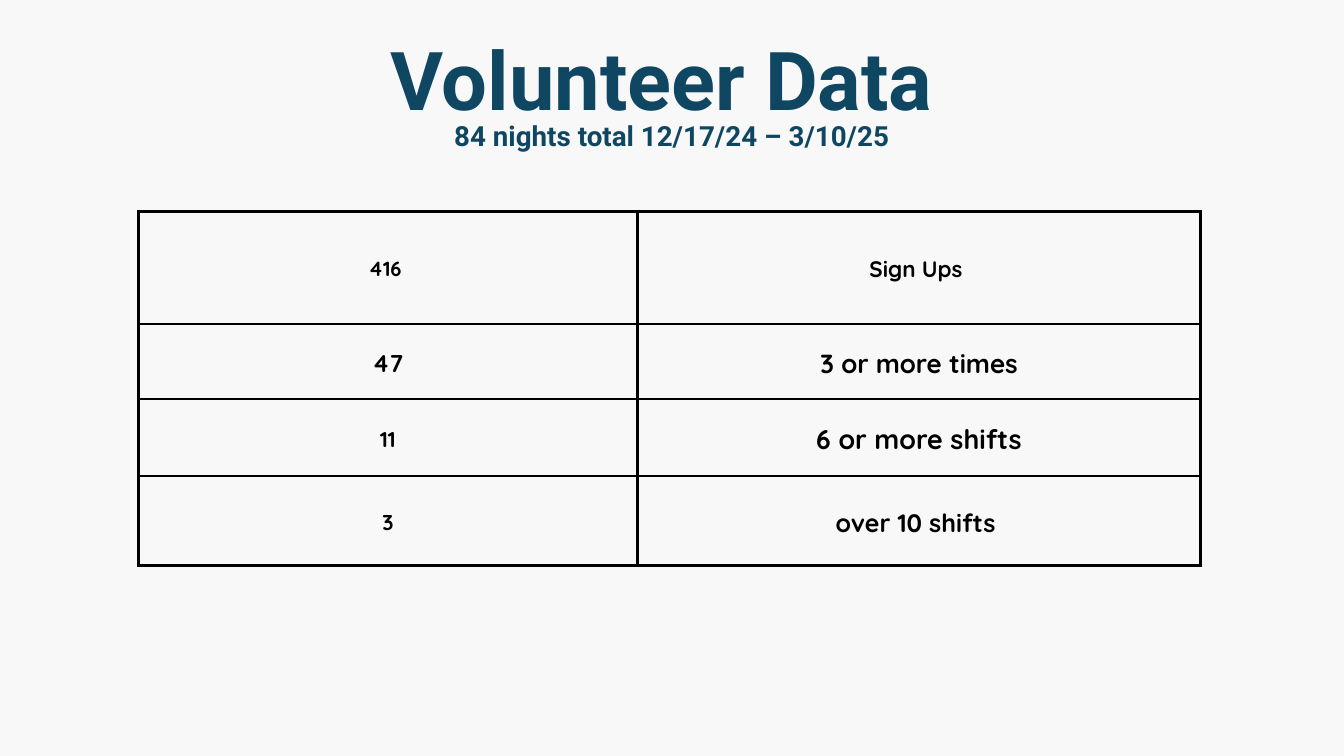
from dataclasses import dataclass

from lxml import etree
from pptx import Presentation
from pptx.dml.color import RGBColor
from pptx.enum.text import MSO_ANCHOR, MSO_AUTO_SIZE, PP_ALIGN
from pptx.oxml.ns import qn
from pptx.util import Cm, Pt

CENTER = PP_ALIGN.CENTER
TOP, MIDDLE = MSO_ANCHOR.TOP, MSO_ANCHOR.MIDDLE
NO_AUTOFIT = MSO_AUTO_SIZE.NONE
TITLE_ONLY = 5


@dataclass(frozen=True)
class Theme:
    background: str = "F8F8F8"
    heading: str = "0F4662"
    ink: str = "000000"
    heading_font: str = "Roboto"
    table_font: str = "Quicksand"
    title_size: float = 87
    subtitle_size: float = 29.7
    leading: float = 1.4
    subtitle_leading: float = 1.7
    border_width: float = 3
    cell_margin: float = 0.53


THEME = Theme()

# Each row: height in cm, then (text, type size) for both cells
VOLUNTEER_ROWS = [
    (4.24, ("416 ", 22), ("Sign Ups ", 24)),
    (2.84, ("47", 26), ("3 or more times", 28)),
    (2.92, ("11", 23), ("6 or more shifts", 29)),
    (3.38, ("3", 23), ("over 10 shifts ", 27)),
]
COLUMN_SHARES = (0.47, 0.53)


def write_line(text_frame, text, size, font, color, leading=THEME.leading):
    """Write one centred bold line with exact line spacing."""
    paragraph = text_frame.paragraphs[0]
    paragraph.alignment = CENTER
    paragraph.line_spacing = Pt(round(size * leading, 1))
    paragraph.space_before = Pt(0)
    run = paragraph.add_run()
    run.text = text
    run.font.size = Pt(size)
    run.font.name = font
    run.font.bold = True
    run.font.color.rgb = RGBColor.from_string(color)


def place_heading(shape, box, text, size, leading=THEME.leading):
    shape.left, shape.top, shape.width, shape.height = map(Cm, box)
    text_frame = shape.text_frame
    text_frame.word_wrap = True
    text_frame.auto_size = NO_AUTOFIT
    text_frame.vertical_anchor = TOP
    text_frame.margin_left = text_frame.margin_right = 0
    text_frame.margin_top = text_frame.margin_bottom = 0
    write_line(text_frame, text, size, THEME.heading_font, THEME.heading, leading)


def draw_borders(cell):
    properties = cell._tc.get_or_add_tcPr()
    for side in ("a:lnL", "a:lnR", "a:lnT", "a:lnB"):
        line = etree.SubElement(properties, qn(side), w=str(Pt(THEME.border_width)))
        fill = etree.SubElement(line, qn("a:solidFill"))
        etree.SubElement(fill, qn("a:srgbClr"), val=THEME.ink)


def format_cell(cell, text, size):
    margin = Cm(THEME.cell_margin)
    cell.margin_left = cell.margin_right = margin
    cell.margin_top = cell.margin_bottom = margin
    cell.vertical_anchor = MIDDLE
    draw_borders(cell)
    cell.fill.background()
    write_line(cell.text_frame, text, size, THEME.table_font, THEME.ink)


def add_volunteer_table(slide, left, top, width):
    height = sum(row[0] for row in VOLUNTEER_ROWS)
    frame = slide.shapes.add_table(
        len(VOLUNTEER_ROWS), len(COLUMN_SHARES),
        Cm(left), Cm(top), Cm(width), Cm(height))
    table = frame.table
    table.first_row = table.horz_banding = False
    for column, share in zip(table.columns, COLUMN_SHARES):
        column.width = Cm(width * share)
    for row, (row_height, *entries) in zip(table.rows, VOLUNTEER_ROWS):
        row.height = Cm(row_height)
        for cell, (text, size) in zip(row.cells, entries):
            format_cell(cell, text, size)


def build_volunteer_slide(presentation):
    slide = presentation.slides.add_slide(presentation.slide_layouts[TITLE_ONLY])
    background = slide.background.fill
    background.solid()
    background.fore_color.rgb = RGBColor.from_string(THEME.background)

    # Title and period covered
    place_heading(slide.shapes.title, (9.37, 0.48, 32.05, 4.52),
                  "Volunteer Data ", THEME.title_size)
    subtitle = slide.shapes.add_textbox(0, 0, 0, 0)
    place_heading(subtitle, (17.09, 3.96, 16.61, 6.22),
                  "84 nights total 12/17/24 – 3/10/25",
                  THEME.subtitle_size, THEME.subtitle_leading)

    # Volunteer counts
    add_volunteer_table(slide, left=5.23, top=8, width=40.15)


def main():
    presentation = Presentation()
    presentation.slide_width = Cm(50.8)
    presentation.slide_height = Cm(28.58)
    build_volunteer_slide(presentation)
    presentation.save("out.pptx")


if __name__ == "__main__":
    main()
